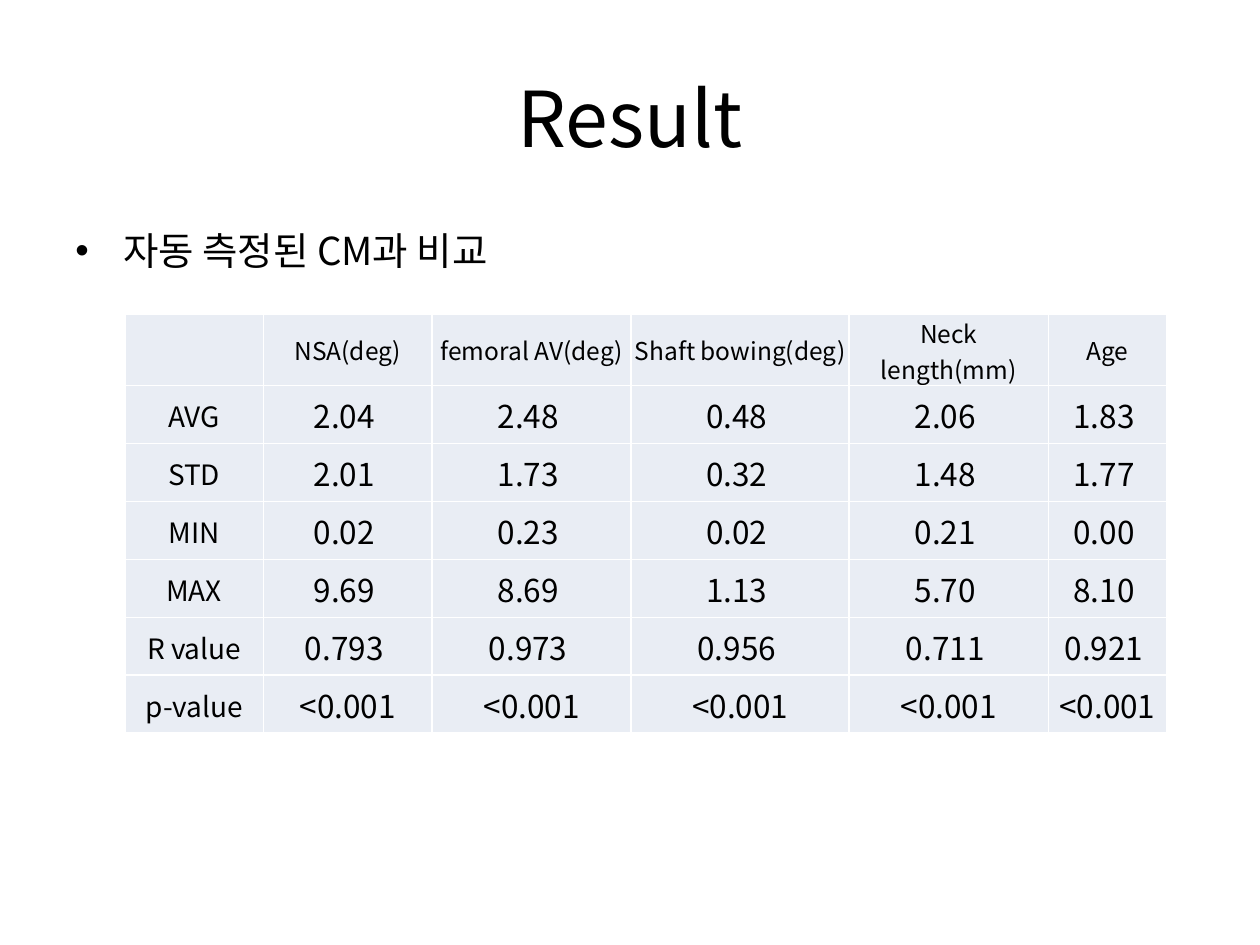
"""Build the result slide comparing automatic measurements with CM."""
from typing import NamedTuple

import pptx
import pptx.dml.color
import pptx.enum.text
import pptx.oxml
import pptx.oxml.ns
import pptx.util

Inches = pptx.util.Inches
Pt = pptx.util.Pt
PP_ALIGN = pptx.enum.text.PP_ALIGN
MSO_ANCHOR = pptx.enum.text.MSO_ANCHOR
FONT = "Noto Sans CJK KR"
NS = pptx.oxml.ns.nsdecls("a")


class Row(NamedTuple):
    label: str
    values: list[str]
    height: float = 0.46


HEADERS = ["NSA(deg)", "femoral AV(deg)", "Shaft bowing(deg)", "Neck length(mm)", "Age"]
ROWS = [
    Row("", HEADERS, 0.57),
    Row("AVG", ["2.04 ", "2.48 ", "0.48 ", "2.06 ", "1.83 "]),
    Row("STD", ["2.01 ", "1.73 ", "0.32 ", "1.48 ", "1.77 "]),
    Row("MIN", ["0.02 ", "0.23 ", "0.02 ", "0.21 ", "0.00 "]),
    Row("MAX", ["9.69 ", "8.69 ", "1.13 ", "5.70 ", "8.10 "]),
    Row("R value", ["0.793 ", "0.973 ", "0.956 ", "0.711 ", "0.921 "]),
    Row("p-value", ["<0.001"] * len(HEADERS)),
]
COLUMN_WIDTHS = [1.1, 1.34, 1.58, 1.73, 1.58, 0.94]


def color(value: str) -> pptx.dml.color.RGBColor:
    return pptx.dml.color.RGBColor.from_string(value)


def write(tf, text: str, size: float, align=PP_ALIGN.CENTER):
    p = tf.paragraphs[0]
    p.text = text
    p.alignment = align
    p.font.size = Pt(size)
    p.font.name = FONT
    p.font.color.rgb = color("000000")
    ea = pptx.oxml.parse_xml(f'<a:ea {NS} typeface="{FONT}"/>')
    p.font._element.find(pptx.oxml.ns.qn("a:latin")).addnext(ea)
    return p


def add_text(s, box: tuple, text: str, size: float, align, anchor):
    tf = s.shapes.add_textbox(*map(Inches, box)).text_frame
    tf.word_wrap = True
    tf.vertical_anchor = anchor
    return write(tf, text, size, align)


def add_bullet(p) -> None:
    pPr = p._p.get_or_add_pPr()
    pPr.set("marL", str(Inches(0.38)))
    pPr.set("indent", str(Inches(-0.38)))
    defaults = pPr.find(pptx.oxml.ns.qn("a:defRPr"))
    for xml in (f'<a:buFont {NS} typeface="Arial"/>', f'<a:buChar {NS} char="•"/>'):
        defaults.addprevious(pptx.oxml.parse_xml(xml))


def style_cell(cell) -> None:
    cell.vertical_anchor = MSO_ANCHOR.MIDDLE
    cell.margin_left = cell.margin_right = cell.margin_top = Inches(0.01)
    cell.margin_bottom = Inches(0)
    cell.fill.solid()
    cell.fill.fore_color.rgb = color("E9EDF4")
    tcPr = cell._tc.get_or_add_tcPr()
    for i, side in enumerate(("lnL", "lnR", "lnT", "lnB")):
        tcPr.insert(i, pptx.oxml.parse_xml(
            f'<a:{side} {NS} w="{Pt(1)}"><a:solidFill><a:srgbClr val="FFFFFF"/>'
            f'</a:solidFill></a:{side}>'))


def add_results(s) -> None:
    table = s.shapes.add_table(
        len(ROWS), len(COLUMN_WIDTHS), Inches(0.99), Inches(2.49),
        Inches(sum(COLUMN_WIDTHS)), Inches(sum(row.height for row in ROWS))).table
    table.first_row = table.horz_banding = False
    for column, width in zip(table.columns, COLUMN_WIDTHS):
        column.width = Inches(width)
    for i, row in enumerate(ROWS):
        table.rows[i].height = Inches(row.height)
        for j, text in enumerate([row.label, *row.values]):
            cell = table.cell(i, j)
            style_cell(cell)
            size = 14 if i == 0 else 16 if j == 0 else 18
            write(cell.text_frame, text, size)


def main() -> None:
    prs = pptx.Presentation()
    prs.slide_width, prs.slide_height = Inches(10), Inches(7.5)
    s = prs.slides.add_slide(prs.slide_layouts[6])
    add_text(s, (0.5, 0.3, 9, 1.25), "Result", 44, PP_ALIGN.CENTER, MSO_ANCHOR.MIDDLE)
    p = add_text(s, (0.5, 1.75, 9, 4.95), "자동 측정된 CM과 비교", 22,
                 PP_ALIGN.LEFT, MSO_ANCHOR.TOP)
    p.space_before = Pt(4.4)
    add_bullet(p)
    add_results(s)
    prs.save("out.pptx")


if __name__ == "__main__":
    main()
